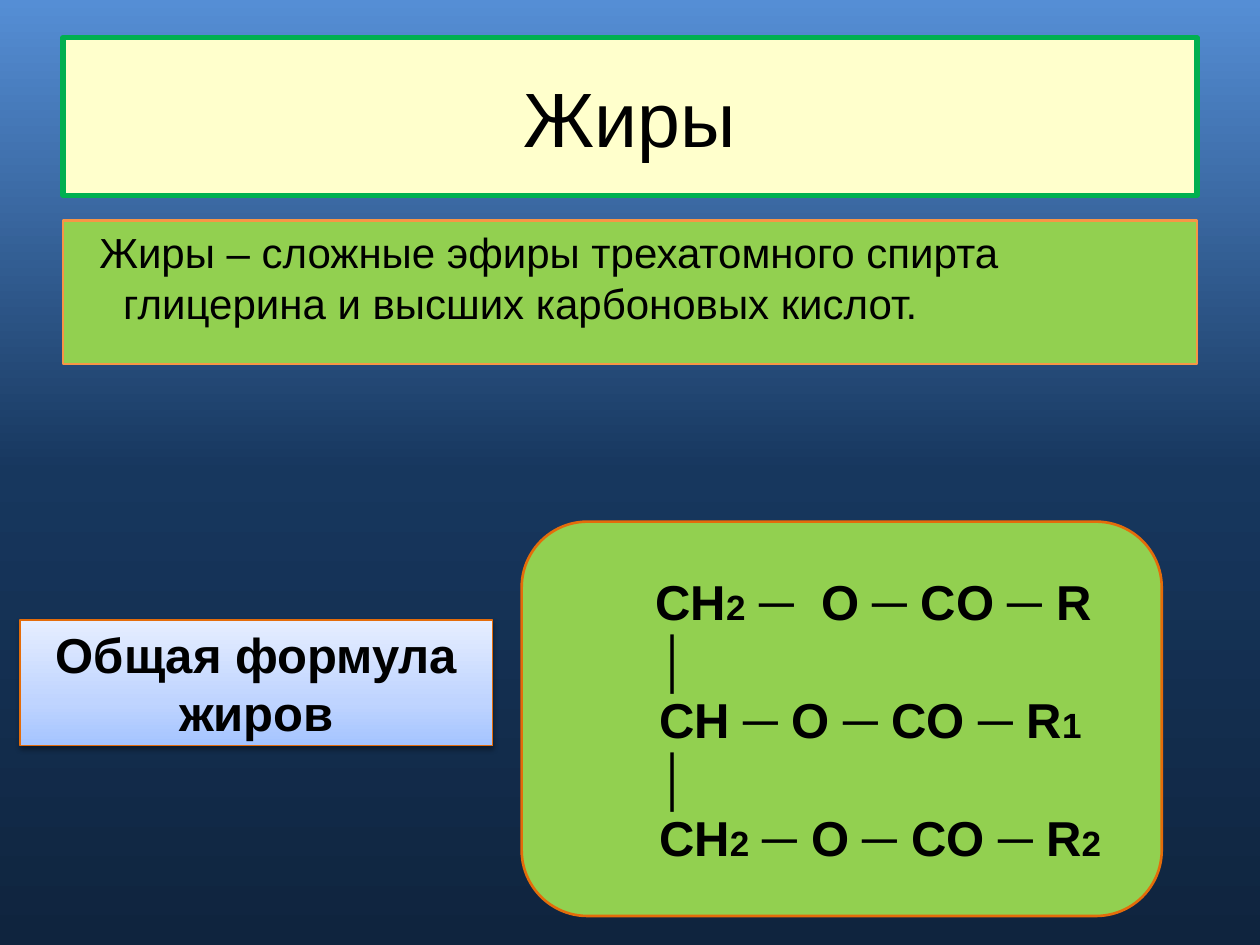
import dataclasses

import pptx
import pptx.dml.color
import pptx.enum.shapes
import pptx.enum.text
import pptx.oxml
import pptx.oxml.ns
import pptx.util

Inches = pptx.util.Inches
Pt = pptx.util.Pt
Kind = pptx.enum.shapes.MSO_SHAPE
Align = pptx.enum.text.PP_ALIGN
Anchor = pptx.enum.text.MSO_ANCHOR
qn = pptx.oxml.ns.qn
NS = pptx.oxml.ns.nsdecls("a")


@dataclasses.dataclass(frozen=True)
class Theme:
    font: str = "Arial"
    ink: str = "000000"
    green: str = "92D050"
    cream: str = "FFFFCC"
    frame: str = "00B050"
    peach: str = "F79646"
    rust: str = "E46C0A"
    night: tuple = ((0, "558ED5"), (50, "17375E"), (100, "0F243E"))
    pale: tuple = ((0, "A4C4FF"), (35, "BFD4FF"), (100, "E6EEFF"))
    title: int = 44
    body: int = 24
    label: int = 28
    sub: int = 20


def rgb(code):
    return pptx.dml.color.RGBColor.from_string(code)


class Deck:
    def __init__(self, theme):
        self.theme = theme
        self.file = pptx.Presentation()
        self.file.slide_width = Inches(10)
        self.file.slide_height = Inches(7.5)
        self.slide = self.file.slides.add_slide(self.file.slide_layouts[6])

    def shade(self, fill, owner, stops, angle):
        fill.gradient()
        grad = owner.find(".//" + qn("a:gradFill"))
        items = "".join(
            f'<a:gs pos="{pos * 1000}"><a:srgbClr val="{code}"/></a:gs>'
            for pos, code in stops)
        new = pptx.oxml.parse_xml(f"<a:gsLst {NS}>{items}</a:gsLst>")
        grad.replace(grad.find(qn("a:gsLst")), new)
        lin = grad.find(qn("a:lin"))
        lin.set("ang", str(angle * 60000))
        lin.set("scaled", "0")

    def back(self, stops):
        self.shade(self.slide.background.fill, self.slide.element, stops, 90)

    def panel(self, box, fill, line, width, kind=Kind.RECTANGLE,
              anchor=Anchor.MIDDLE):
        shape = self.slide.shapes.add_shape(kind, *map(Inches, box))
        shape.shadow.inherit = False
        if isinstance(fill, str):
            shape.fill.solid()
            shape.fill.fore_color.rgb = rgb(fill)
        else:
            self.shade(shape.fill, shape.element, fill, 270)
        shape.line.color.rgb = rgb(line)
        shape.line.width = Pt(width)
        shape.text_frame.word_wrap = True
        shape.text_frame.vertical_anchor = anchor
        return shape

    def shadow(self, shape):
        blur, drop = Pt(3.1), Pt(1.6)
        shape.element.find(".//" + qn("a:effectLst")).append(
            pptx.oxml.parse_xml(
                f'<a:outerShdw {NS} blurRad="{blur}" dist="{drop}" '
                'dir="5400000" rotWithShape="0"><a:srgbClr val="000000">'
                '<a:alpha val="38000"/></a:srgbClr></a:outerShdw>'))

    def para(self, shape, runs, align=Align.CENTER, left=0, first=0,
             before=0, bold=False):
        frame = shape.text_frame
        para = frame.paragraphs[0]
        if para.runs:
            para = frame.add_paragraph()
        para.alignment = align
        para.space_before = Pt(before)
        props = para._p.get_or_add_pPr()
        props.set("marL", str(Inches(left)))
        props.set("indent", str(Inches(first)))
        for text, size, gap in runs:
            run = para.add_run()
            run.text = text
            run.font.name = self.theme.font
            run.font.size = Pt(size)
            run.font.bold = bold
            run.font.color.rgb = rgb(self.theme.ink)
            if gap:
                run.font._element.set("spc", str(gap))


def main():
    look = Theme()
    deck = Deck(look)
    deck.back(look.night)

    body = deck.panel((0.5, 1.75, 9, 1.14), look.green, look.peach, 1.5,
                      anchor=Anchor.TOP)
    deck.para(body, [("Жиры – сложные эфиры трехатомного спирта "
                      "глицерина и высших карбоновых кислот.", look.body, 0)],
              Align.LEFT, left=0.38, first=-0.19, before=4.8)

    label = deck.panel((0.16, 4.92, 3.75, 1), look.pale, look.rust, 0.75)
    deck.shadow(label)
    deck.para(label, [("Общая формула жиров", look.label, 0)], bold=True)

    card = deck.panel((4.14, 4.14, 5.08, 3.13), look.green, look.rust, 1.5,
                      Kind.FLOWCHART_ALTERNATE_PROCESS)
    big, sub = look.label, look.sub
    bond = [("│", big, 0)]
    rows = [
        [("СH", big, 0), ("2", sub, 0), (" ─", big, 0), (" ", big, 780),
         ("O ─ CO ─ R", big, 0)],
        bond,
        [("CH ─ O ─ CO ─ R", big, 0), ("1", sub, 0)],
        bond,
        [("CH", big, 0), ("2", sub, 0), (" ─ O ─ CO ─ R", big, 0),
         ("2", sub, 0)],
    ]
    for row, runs in enumerate(rows):
        deck.para(card, runs, Align.LEFT, left=0.84 if row else 0.81,
                  bold=True)

    title = deck.panel((0.5, 0.3, 9, 1.25), look.cream, look.frame, 3)
    deck.para(title, [("Жиры", look.title, 0)])

    deck.file.save("out.pptx")


if __name__ == "__main__":
    main()
